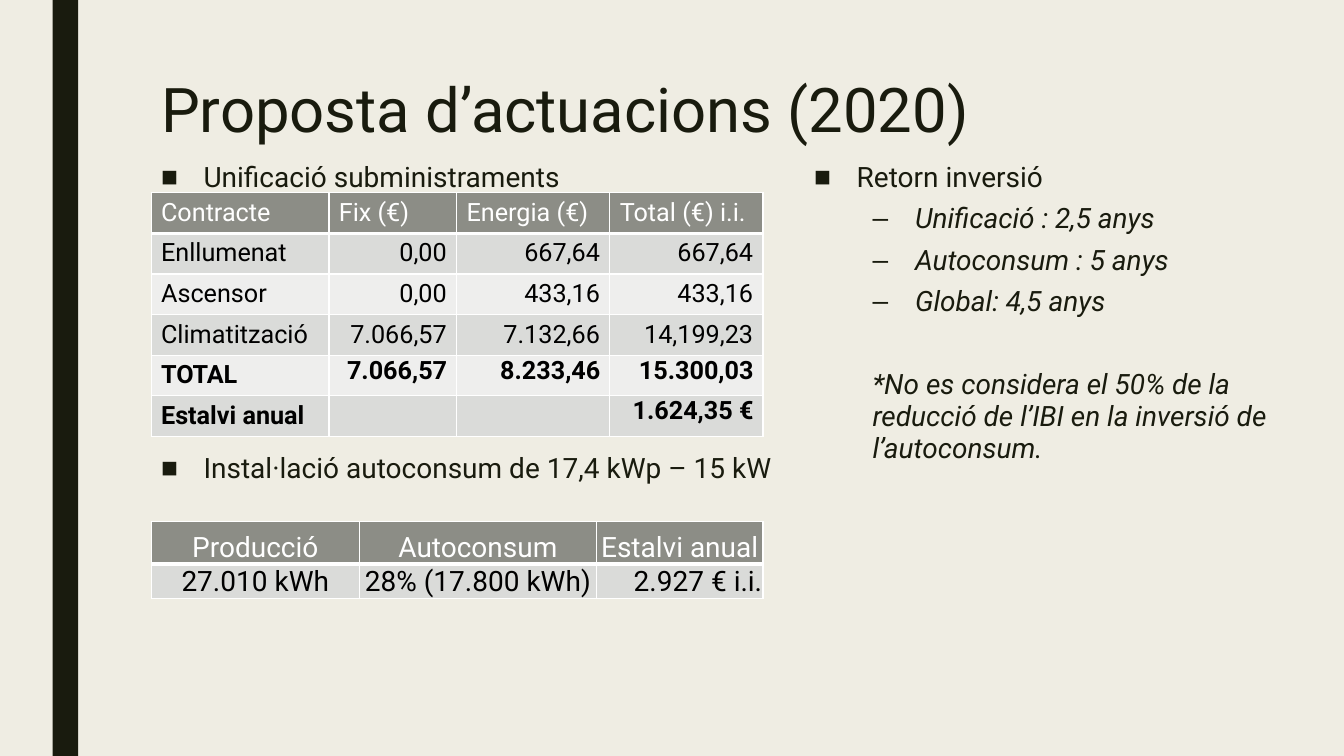
from lxml import etree
from pptx import Presentation
from pptx.dml.color import RGBColor
from pptx.enum.shapes import MSO_SHAPE
from pptx.enum.text import MSO_ANCHOR, PP_ALIGN
from pptx.oxml.ns import qn
from pptx.util import Cm, Pt

LEFT, CENTER, RIGHT = PP_ALIGN.LEFT, PP_ALIGN.CENTER, PP_ALIGN.RIGHT
TOP, BOTTOM = MSO_ANCHOR.TOP, MSO_ANCHOR.BOTTOM

COLORS = {
    "background": "EFEDE3",
    "ink": "191B0E",
    "header": "8C8D86",
    "dark_band": "DADBD9",
    "light_band": "EEEEED",
    "white": "FFFFFF",
    "black": "000000",
}
FONT = "Roboto"

TITLE = "Proposta d’actuacions (2020)"
SUPPLY_HEADING = "Unificació subministraments"
SOLAR_HEADING = "Instal·lació autoconsum de 17,4 kWp – 15 kW"
RETURN_HEADING = "Retorn inversió"
RETURNS = ["Unificació : 2,5 anys", "Autoconsum : 5 anys", "Global: 4,5 anys"]
RETURN_NOTE = "*No es considera el 50% de la reducció de l’IBI en la inversió de l’autoconsum."

CONTRACTS = [
    ("Contracte", "Fix (€)", "Energia (€)", "Total (€) i.i."),
    ("Enllumenat", "0,00", "667,64", "667,64"),
    ("Ascensor", "0,00", "433,16", "433,16"),
    ("Climatització", "7.066,57", "7.132,66", "14,199,23"),
    ("TOTAL", "7.066,57", "8.233,46", "15.300,03"),
    ("Estalvi anual", "", "", "1.624,35 €"),
]
FIRST_BOLD_ROW = 4
SOLAR = [
    ("Producció", "Autoconsum", "Estalvi anual"),
    ("27.010 kWh", "28% (17.800 kWh)", "2.927 € i.i."),
]

# Lengths in centimetres
SLIDE_WIDTH, SLIDE_HEIGHT = 33.87, 19.05
LEFT_EDGE, RIGHT_EDGE = 3.81, 20.27
BODY_TOP, SOLAR_TOP = 3.96, 11.3
HANGING, SUB_INDENT, NOTE_INDENT = 1.07, 2.54, 1.47
NORMAL_INSETS = (0.25, 0.13, 0.25, 0.13)
TOTAL_INSETS = (0.02, 0.02, 0.24, 0)
TIGHT_INSETS = (0.02, 0.02, 0.02, 0)


def rgb(name):
    return RGBColor.from_string(COLORS[name])


def write(paragraph, text, size=20, color="ink", bold=False, italic=False, align=LEFT,
          bullet=None, indent=0, hanging=0, line_spacing=None, before=0, after=0):
    properties = paragraph._p.get_or_add_pPr()
    properties.set("marL", str(Cm(indent)))
    properties.set("indent", str(-Cm(hanging)))
    paragraph.alignment = align
    paragraph.space_before, paragraph.space_after = Pt(before), Pt(after)
    if line_spacing:
        paragraph.line_spacing = line_spacing
    if bullet:
        etree.SubElement(properties, qn("a:buFont"), typeface="Arial")
        etree.SubElement(properties, qn("a:buChar"), char=bullet)
    else:
        etree.SubElement(properties, qn("a:buNone"))
    run = paragraph.add_run()
    run.text = text
    font = run.font
    font.name, font.size, font.bold, font.italic = FONT, Pt(size), bold, italic
    font.color.rgb = rgb(color)


def add_text(slide, left, top, width, height, paragraphs):
    """Add a wrapped text box from (text, format) pairs."""
    box = slide.shapes.add_textbox(Cm(left), Cm(top), Cm(width), Cm(height))
    frame = box.text_frame
    frame.word_wrap = True
    frame.vertical_anchor = TOP
    for number, (text, style) in enumerate(paragraphs):
        paragraph = frame.paragraphs[0] if number == 0 else frame.add_paragraph()
        write(paragraph, text, **style)


def add_borders(cell, bottom_width):
    properties = cell._tc.get_or_add_tcPr()
    for side, width in (("L", 1), ("R", 1), ("T", 1), ("B", bottom_width)):
        line = etree.SubElement(properties, qn(f"a:ln{side}"), w=str(Pt(width)))
        fill = etree.SubElement(line, qn("a:solidFill"))
        etree.SubElement(fill, qn("a:srgbClr"), val=COLORS["white"])


def add_table(slide, top, rows, column_widths, row_heights, cell_format):
    """Add a banded table; cell_format(row, column) gives insets, anchor and text format."""
    frame = slide.shapes.add_table(len(rows), len(column_widths), Cm(LEFT_EDGE), Cm(top),
                                   Cm(sum(column_widths)), Cm(sum(row_heights)))
    table = frame.table
    table.horz_banding = False
    for column, width in zip(table.columns, column_widths):
        column.width = Cm(width)
    for row, height in zip(table.rows, row_heights):
        row.height = Cm(height)
    for r, values in enumerate(rows):
        band = "header" if r == 0 else ("dark_band" if r % 2 else "light_band")
        for c, value in enumerate(values):
            cell = table.cell(r, c)
            insets, anchor, style = cell_format(r, c)
            add_borders(cell, 3 if r == 0 else 1)
            cell.fill.solid()
            cell.fill.fore_color.rgb = rgb(band)
            cell.vertical_anchor = anchor
            (cell.margin_left, cell.margin_top,
             cell.margin_right, cell.margin_bottom) = map(Cm, insets)
            if value:
                color = "white" if r == 0 else "black"
                write(cell.text_frame.paragraphs[0], value, color=color, **style)


def contract_format(row, column):
    is_total = row >= FIRST_BOLD_ROW
    is_number = row > 0 and column > 0
    insets = TOTAL_INSETS if is_total and is_number else NORMAL_INSETS
    return insets, TOP, dict(size=18, bold=is_total, align=RIGHT if is_number else LEFT)


def solar_format(row, column):
    return TIGHT_INSETS, BOTTOM, dict(align=RIGHT if (row, column) == (1, 2) else CENTER)


def main():
    presentation = Presentation()
    presentation.slide_width, presentation.slide_height = Cm(SLIDE_WIDTH), Cm(SLIDE_HEIGHT)
    slide = presentation.slides.add_slide(presentation.slide_layouts[6])
    slide.background.fill.solid()
    slide.background.fill.fore_color.rgb = rgb("background")

    stripe = slide.shapes.add_shape(MSO_SHAPE.RECTANGLE, Cm(1.33), 0, Cm(0.64), Cm(SLIDE_HEIGHT))
    stripe.shadow.inherit = False
    stripe.fill.solid()
    stripe.fill.fore_color.rgb = rgb("ink")
    stripe.line.fill.background()

    heading = dict(bullet="■", indent=HANGING, hanging=HANGING, line_spacing=0.94, after=2)
    detail = dict(italic=True, line_spacing=0.94, before=5, after=2)
    sub_item = dict(detail, bullet="–", indent=SUB_INDENT, hanging=HANGING)
    note = dict(detail, indent=NOTE_INDENT, before=35)

    add_text(slide, LEFT_EDGE, 1.9, 26.67, 4.11, [(TITLE, dict(size=44, line_spacing=0.89))])
    add_text(slide, LEFT_EDGE, BODY_TOP, 16.2, 0.9, [(SUPPLY_HEADING, heading)])
    add_text(slide, LEFT_EDGE, SOLAR_TOP, 16.2, 1.1, [(SOLAR_HEADING, heading)])
    add_table(slide, 4.86, CONTRACTS, (4.48, 3.22, 3.86, 3.86), [1.02] * len(CONTRACTS),
              contract_format)
    add_table(slide, 13.14, SOLAR, (5.25, 5.97, 4.2), (1.07, 0.86), solar_format)
    add_text(slide, RIGHT_EDGE, BODY_TOP, 13.46, 9.96,
             [(RETURN_HEADING, heading)]
             + [(text, sub_item) for text in RETURNS]
             + [(RETURN_NOTE, note)])

    presentation.save("out.pptx")


if __name__ == "__main__":
    main()
